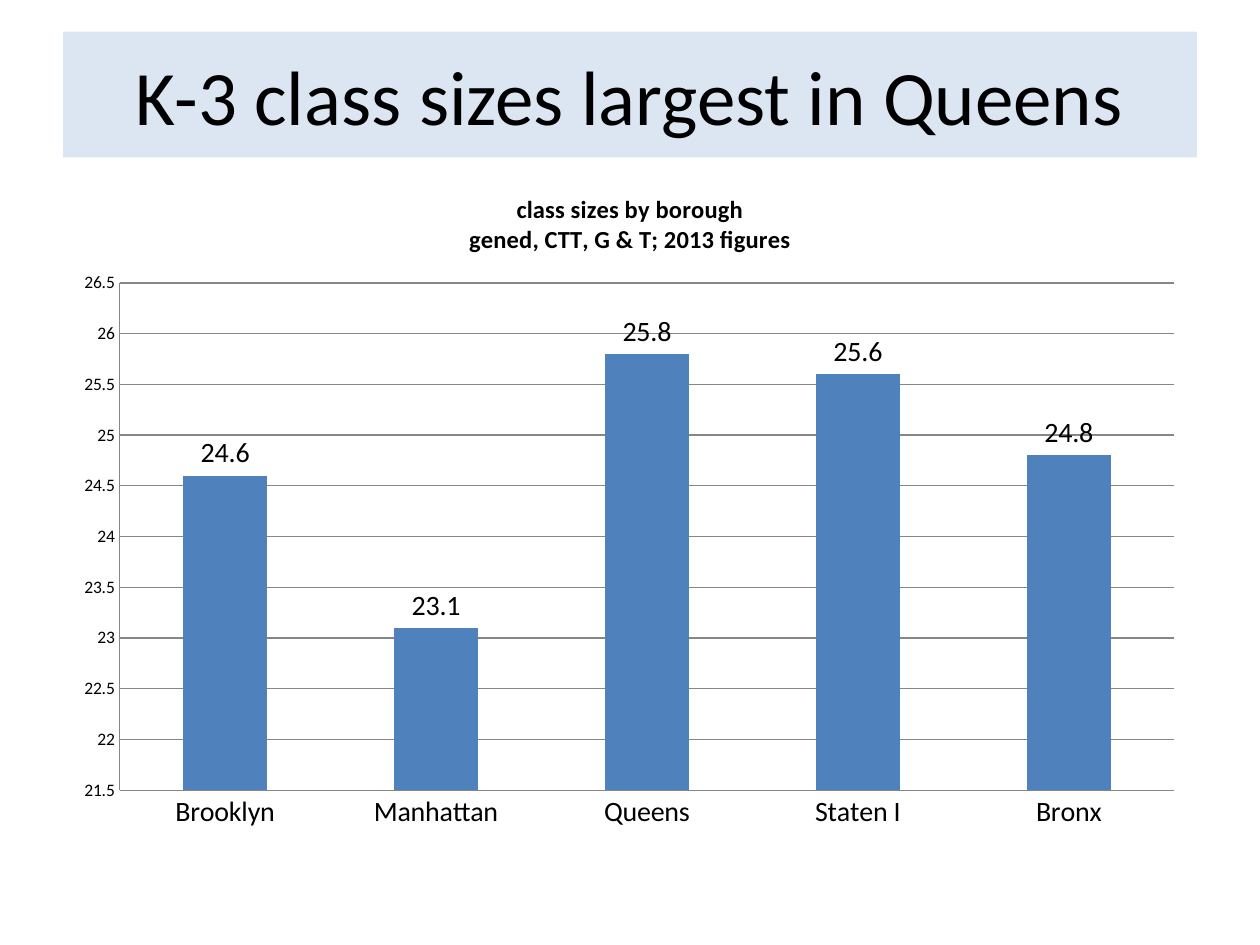
from lxml import etree
from pptx import Presentation
from pptx.chart.data import CategoryChartData
from pptx.dml.color import RGBColor
from pptx.enum.chart import XL_CHART_TYPE, XL_LABEL_POSITION, XL_TICK_MARK
from pptx.enum.text import MSO_ANCHOR, PP_ALIGN
from pptx.oxml.ns import qn
from pptx.util import Pt

BLACK = RGBColor(0x00, 0x00, 0x00)
PALE_BLUE = RGBColor(0xDC, 0xE6, 0xF2)
BAR_BLUE = RGBColor(0x4F, 0x81, 0xBD)
GRID_GRAY = RGBColor(0x86, 0x86, 0x86)
FONT = "Calibri"


def style(font, size, bold=False):
    font.name = FONT
    font.size = Pt(size)
    font.bold = bold
    font.color.rgb = BLACK


presentation = Presentation()
presentation.slide_width, presentation.slide_height = Pt(720), Pt(540)
slide = presentation.slides.add_slide(presentation.slide_layouts[5])

# Heading on a pale band
heading = slide.shapes.title
heading.left, heading.top, heading.width, heading.height = Pt(36), Pt(18), Pt(648), Pt(72)
heading.fill.solid()
heading.fill.fore_color.rgb = PALE_BLUE
heading.text_frame.text = "K-3 class sizes largest in Queens"
heading.text_frame.vertical_anchor = MSO_ANCHOR.MIDDLE
heading_line = heading.text_frame.paragraphs[0]
heading_line.alignment = PP_ALIGN.CENTER
style(heading_line.runs[0].font, 44)

# Class size by borough
class_sizes = CategoryChartData(number_format="#,##0.0")
class_sizes.categories = ["Brooklyn", "Manhattan", "Queens", "Staten I", "Bronx"]
class_sizes.add_series("Series 1", [24.6, 23.1, 25.8, 25.6, 24.8])
chart = slide.shapes.add_chart(
    XL_CHART_TYPE.COLUMN_CLUSTERED, Pt(36), Pt(96), Pt(648), Pt(386.5), class_sizes
).chart
style(chart.font, 10)
chart.has_legend = False

# Chart title
chart.has_title = True
caption = chart.chart_title.text_frame
caption.text = "class sizes by borough\ngened, CTT, G & T; 2013 figures"
for caption_line in caption.paragraphs:
    style(caption_line.runs[0].font, 14, bold=True)
chart.chart_title.include_in_layout = False

# Bars and their values
boroughs = chart.plots[0]
boroughs.gap_width = 150
boroughs.vary_by_categories = False
bars = boroughs.series[0]
bars.format.fill.solid()
bars.format.fill.fore_color.rgb = BAR_BLUE
boroughs.has_data_labels = True
bar_values = boroughs.data_labels
bar_values.show_value = True
bar_values.number_format = "#,##0.0"
bar_values.number_format_is_linked = False
bar_values.position = XL_LABEL_POSITION.OUTSIDE_END
style(bar_values.font, 16)

# Axes and gridlines
borough_axis, size_axis = chart.category_axis, chart.value_axis
for axis, label_size in ((borough_axis, 16), (size_axis, 10)):
    axis.major_tick_mark = axis.minor_tick_mark = XL_TICK_MARK.NONE
    axis.format.line.color.rgb = GRID_GRAY
    style(axis.tick_labels.font, label_size)
size_axis.minimum_scale = 21.5
size_axis.maximum_scale = 26.5
size_axis.major_unit = 0.5
size_axis.tick_labels.number_format = "General"
size_axis.tick_labels.number_format_is_linked = False
size_axis.has_major_gridlines = True
size_axis.major_gridlines.format.line.color.rgb = GRID_GRAY

# Plot area, in fractions of the chart
plot_area = chart.element.find(".//" + qn("c:plotArea"))
for default_layout in plot_area.findall(qn("c:layout")):
    plot_area.remove(default_layout)
layout = etree.Element(qn("c:layout"))
plot_area.insert(0, layout)
manual_layout = etree.SubElement(layout, qn("c:manualLayout"))
for tag, value in (
    ("layoutTarget", "inner"), ("xMode", "edge"), ("yMode", "edge"),
    ("x", "0.05"), ("y", "0.17"), ("w", "0.93"), ("h", "0.75"),
):
    etree.SubElement(manual_layout, qn("c:" + tag)).set("val", value)

presentation.save("out.pptx")
